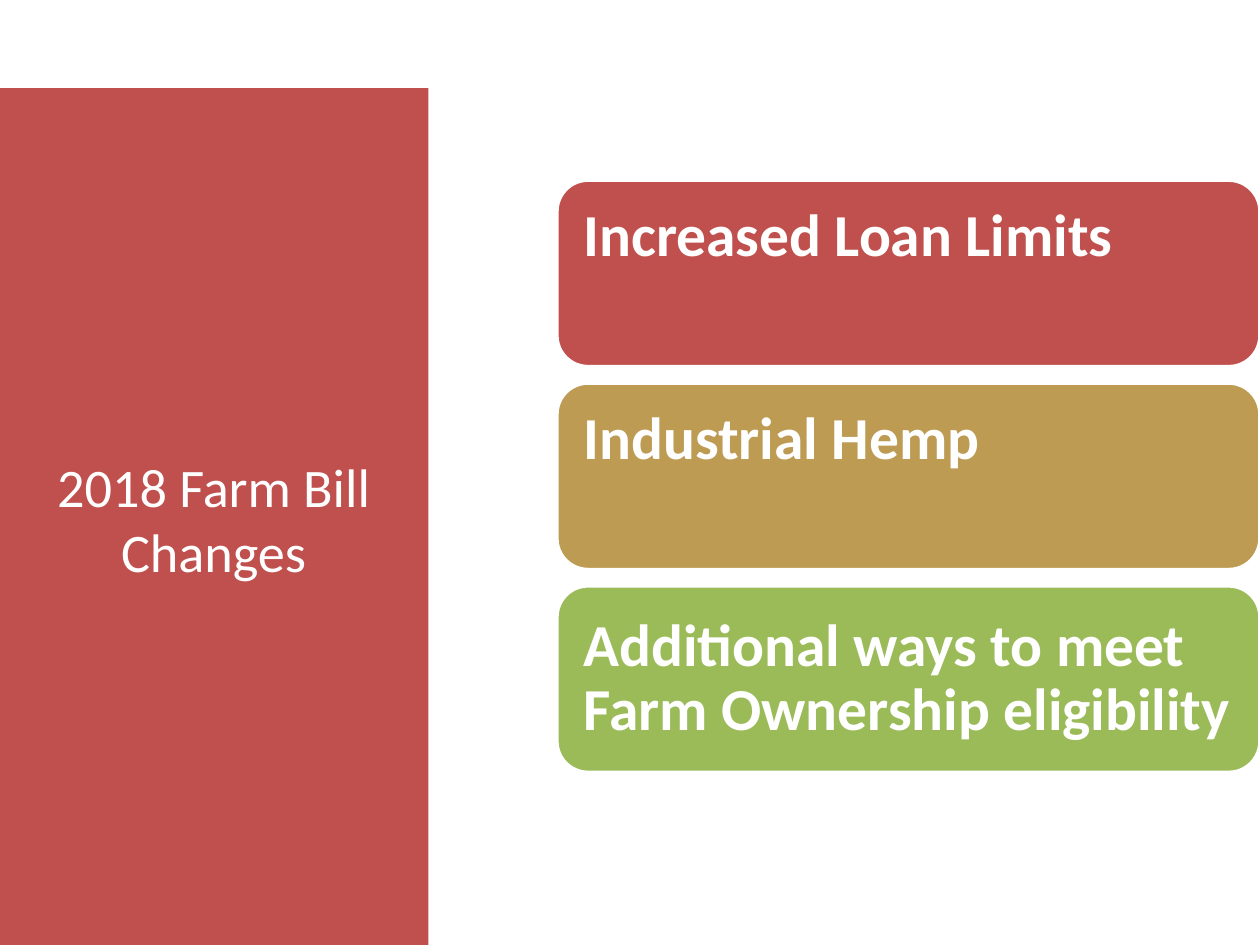
from dataclasses import dataclass

import pptx
import pptx.dml.color
import pptx.enum.shapes
import pptx.enum.text
import pptx.oxml.ns
import pptx.util
from lxml import etree

SHAPE = pptx.enum.shapes.MSO_SHAPE
ALIGN = pptx.enum.text.PP_ALIGN


@dataclass(frozen=True)
class Theme:
    font: str = "Calibri"
    white: str = "FFFFFF"
    red: str = "C0504D"
    tan: str = "BD9B53"
    green: str = "9BBB59"
    title_size: int = 31
    card_size: int = 34
    outline: int = 2


THEME = Theme()
WIDTH, HEIGHT = 10, 7.5

# Side panel, slightly past the left and bottom slide edges
PANEL = (-0.01, 0.7, 3.41, 6.83)

# Card column: one card per row, reaching the right slide edge
CARD_LEFT, CARD_TOP = 4.42, 1.43
CARD_WIDTH, CARD_HEIGHT = WIDTH - CARD_LEFT, 1.48
CARD_PITCH = 1.61
CARD_INSET = 0.14


def color(value):
    return pptx.dml.color.RGBColor.from_string(value)


def add_block(slide, kind, box, fill):
    shape = slide.shapes.add_shape(kind, *map(pptx.util.Inches, box))
    shape.shadow.inherit = False
    shape.fill.solid()
    shape.fill.fore_color.rgb = color(fill)
    shape.line.fill.background()
    return shape


def write_text(shape, text, size, alignment, bold=False):
    frame = shape.text_frame
    frame.word_wrap = True
    frame.vertical_anchor = pptx.enum.text.MSO_ANCHOR.MIDDLE
    paragraph = frame.paragraphs[0]
    paragraph.text = text
    paragraph.alignment = alignment
    font = paragraph.font
    font.name, font.size, font.bold = THEME.font, pptx.util.Pt(size), bold
    font.color.rgb = color(THEME.white)
    return paragraph


def end_with_line_break(paragraph, size):
    """Close the paragraph with a break whose empty line has the text size."""
    paragraph.add_line_break()
    qualified = pptx.oxml.ns.qn
    line_break = paragraph._p.findall(qualified("a:br"))[-1]
    for parent, tag in ((line_break, "a:rPr"), (paragraph._p, "a:endParaRPr")):
        etree.SubElement(parent, qualified(tag)).set("sz", str(size * 100))


def add_panel(slide, text):
    panel = add_block(slide, SHAPE.RECTANGLE, PANEL, THEME.red)
    write_text(panel, text, THEME.title_size, ALIGN.CENTER)


def add_card(slide, row, text, fill, spare_line):
    box = (CARD_LEFT, CARD_TOP + row * CARD_PITCH, CARD_WIDTH, CARD_HEIGHT)
    card = add_block(slide, SHAPE.ROUNDED_RECTANGLE, box, fill)
    card.line.color.rgb = color(THEME.white)
    card.line.width = pptx.util.Pt(THEME.outline)

    frame = card.text_frame
    frame.margin_left = frame.margin_right = pptx.util.Inches(CARD_INSET)
    frame.margin_top = frame.margin_bottom = pptx.util.Inches(CARD_INSET)
    paragraph = write_text(card, text, THEME.card_size, ALIGN.LEFT, bold=True)
    paragraph.line_spacing = 0.9
    if spare_line:
        end_with_line_break(paragraph, THEME.card_size)


def main():
    presentation = pptx.Presentation()
    presentation.slide_width = pptx.util.Inches(WIDTH)
    presentation.slide_height = pptx.util.Inches(HEIGHT)
    slide = presentation.slides.add_slide(presentation.slide_layouts[6])

    # Farm bill changes
    cards = (
        ("Increased Loan Limits", THEME.red, True),
        ("Industrial Hemp", THEME.tan, True),
        ("Additional ways to meet Farm Ownership eligibility", THEME.green, False),
    )
    for row, (text, fill, spare_line) in enumerate(cards):
        add_card(slide, row, text, fill, spare_line)

    # Title panel
    add_panel(slide, "2018 Farm Bill Changes")

    presentation.save("out.pptx")


if __name__ == "__main__":
    main()
